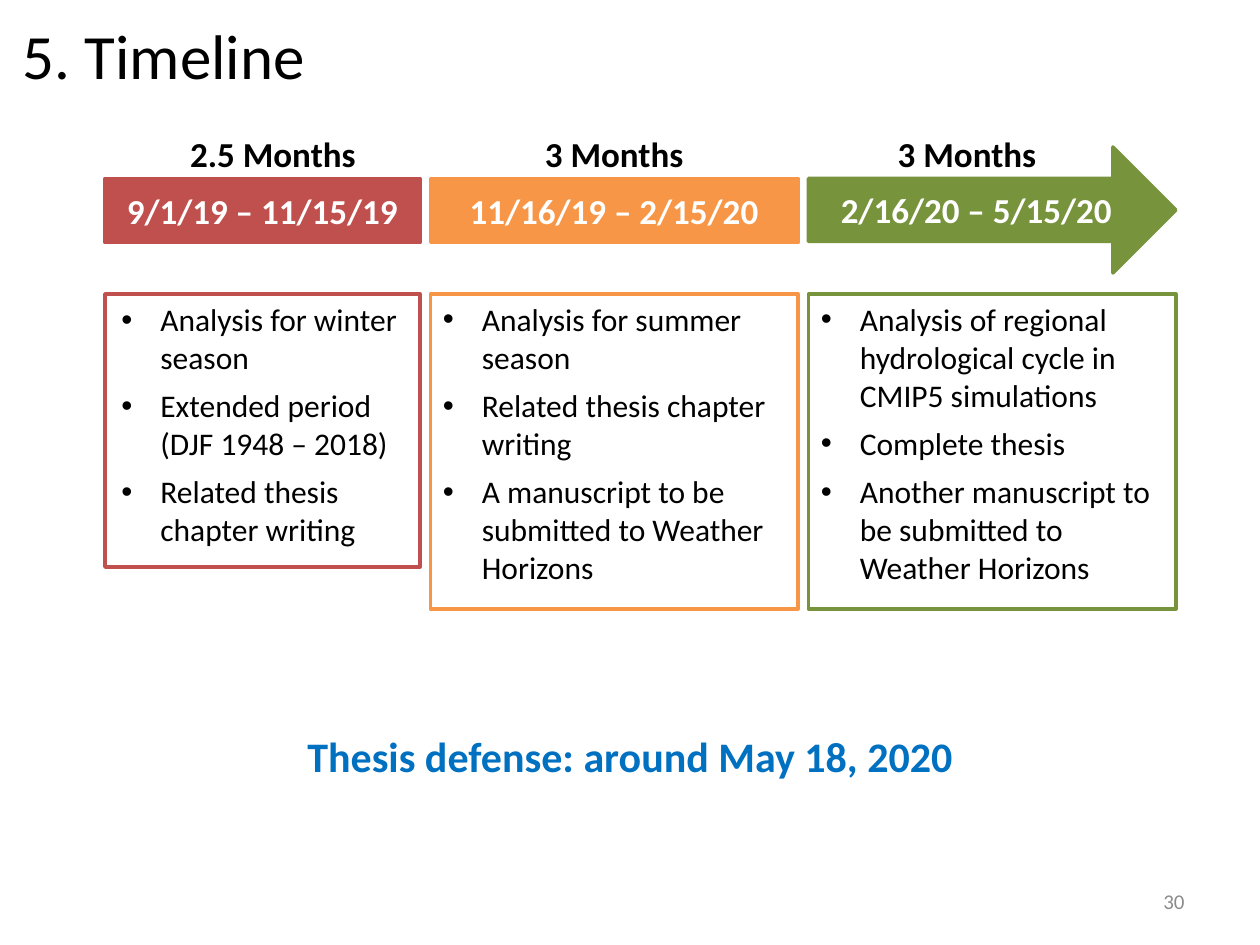
"""Build a thesis timeline slide with three dated phases."""
from dataclasses import dataclass

import pptx
import pptx.dml.color
import pptx.enum.shapes
import pptx.enum.text
import pptx.oxml
import pptx.oxml.ns
import pptx.shapes.autoshape
import pptx.slide
import pptx.text.text
import pptx.util

RGBColor = pptx.dml.color.RGBColor
Shape = pptx.enum.shapes.MSO_SHAPE
Align = pptx.enum.text.PP_ALIGN
Anchor = pptx.enum.text.MSO_ANCHOR

BLACK = RGBColor(0x00, 0x00, 0x00)
WHITE = RGBColor(0xFF, 0xFF, 0xFF)
RED = RGBColor(0xC0, 0x50, 0x4D)
ORANGE = RGBColor(0xF7, 0x96, 0x46)
GREEN = RGBColor(0x77, 0x93, 0x3C)
BLUE = RGBColor(0x00, 0x70, 0xC0)
GRAY = RGBColor(0x8C, 0x8C, 0x8C)

SLIDE_WIDTH = pptx.util.Inches(10)
SLIDE_HEIGHT = pptx.util.Inches(7.5)
COLUMNS, ROWS = 120, 90
FIRST_COLUMN, COLUMN_GAP = 10, 1
LABEL_ROW, BAR_ROW, ARROW_ROW, TASK_ROW = 12, 17, 14, 28
LABEL_ROWS, BAR_ROWS, ARROW_ROWS = 5.3, 6.1, 12
BULLET_INDENT = 0.31


@dataclass(frozen=True)
class Box:
    """Place on the slide grid, in columns and rows."""

    column: float
    row: float
    columns: float
    rows: float

    def lengths(self) -> tuple[int, int, int, int]:
        """Return left, top, width and height in slide units."""
        return (
            int(SLIDE_WIDTH * self.column / COLUMNS),
            int(SLIDE_HEIGHT * self.row / ROWS),
            int(SLIDE_WIDTH * self.columns / COLUMNS),
            int(SLIDE_HEIGHT * self.rows / ROWS),
        )


@dataclass(frozen=True)
class TextStyle:
    """Look of a run and its paragraph."""

    size: float
    color: RGBColor = BLACK
    bold: bool = False
    align: Align = Align.LEFT


@dataclass(frozen=True)
class Phase:
    """One period of the timeline with its tasks."""

    duration: str
    dates: str
    color: RGBColor
    columns: float
    task_rows: float
    tasks: tuple[str, ...]
    label_shift: float = 0
    task_inset: float = 0.1
    is_last: bool = False


TITLE_STYLE = TextStyle(36)
LABEL_STYLE = TextStyle(20, bold=True, align=Align.CENTER)
DATES_STYLE = TextStyle(20, WHITE, True, Align.CENTER)
TASK_STYLE = TextStyle(18)
DEFENSE_STYLE = TextStyle(24, BLUE, True, Align.CENTER)
NUMBER_STYLE = TextStyle(12, GRAY, align=Align.RIGHT)

PHASES = (
    Phase("2.5 Months", "9/1/19 – 11/15/19", RED, 30, 26,
          ("Analysis for winter season", "Extended period (DJF 1948 – 2018)",
           "Related thesis chapter writing"),
          label_shift=1, task_inset=0.13),
    Phase("3 Months", "11/16/19 – 2/15/20", ORANGE, 35, 30,
          ("Analysis for summer season", "Related thesis chapter writing",
           "A manuscript to be submitted to Weather Horizons")),
    Phase("3 Months", "2/16/20 – 5/15/20", GREEN, 35, 30,
          ("Analysis of regional hydrological cycle in CMIP5 simulations",
           "Complete thesis",
           "Another manuscript to be submitted to Weather Horizons"),
          label_shift=-2.4, is_last=True),
)


def add_run(paragraph: pptx.text.text._Paragraph, text: str, style: TextStyle) -> None:
    """Add one styled run and align its paragraph."""
    paragraph.alignment = style.align
    run = paragraph.add_run()
    run.text = text
    run.font.name = "Calibri"
    run.font.size = pptx.util.Pt(style.size)
    run.font.bold = style.bold
    run.font.color.rgb = style.color


def add_text(slide: pptx.slide.Slide, box: Box, text: str, style: TextStyle,
             wrap: bool = True, anchor: Anchor = Anchor.TOP) -> None:
    """Add a text box with a single line."""
    frame = slide.shapes.add_textbox(*box.lengths()).text_frame
    frame.word_wrap = wrap
    frame.vertical_anchor = anchor
    add_run(frame.paragraphs[0], text, style)


def add_outlined(slide: pptx.slide.Slide, kind: Shape, box: Box,
                 color: RGBColor) -> pptx.shapes.autoshape.Shape:
    """Add an unfilled shape with a coloured outline."""
    shape = slide.shapes.add_shape(kind, *box.lengths())
    shape.shadow.inherit = False
    shape.fill.background()
    shape.line.color.rgb = color
    shape.line.width = pptx.util.Pt(2)
    return shape


def add_bullet(paragraph: pptx.text.text._Paragraph) -> None:
    """Give a paragraph a hanging round bullet."""
    indent = pptx.util.Inches(BULLET_INDENT)
    properties = paragraph._p.get_or_add_pPr()
    properties.set("marL", str(indent))
    properties.set("indent", str(-indent))
    namespace = pptx.oxml.ns.nsdecls("a")
    for markup in (f'<a:buFont {namespace} typeface="Arial"/>',
                   f'<a:buChar {namespace} char="•"/>'):
        properties.append(pptx.oxml.parse_xml(markup))


def add_dates(slide: pptx.slide.Slide, phase: Phase, column: float) -> None:
    """Add the filled bar or arrow that carries the dates."""
    if phase.is_last:
        kind, row, rows = Shape.RIGHT_ARROW, ARROW_ROW, ARROW_ROWS
    else:
        kind, row, rows = Shape.RECTANGLE, BAR_ROW, BAR_ROWS
    shape = add_outlined(slide, kind, Box(column, row, phase.columns, rows), phase.color)
    shape.fill.solid()
    shape.fill.fore_color.rgb = phase.color
    shape.text_frame.vertical_anchor = Anchor.MIDDLE
    add_run(shape.text_frame.paragraphs[0], phase.dates, DATES_STYLE)


def add_tasks(slide: pptx.slide.Slide, phase: Phase, column: float) -> None:
    """Add the outlined list of tasks."""
    box = Box(column, TASK_ROW, phase.columns, phase.task_rows)
    frame = add_outlined(slide, Shape.RECTANGLE, box, phase.color).text_frame
    frame.word_wrap = True
    frame.vertical_anchor = Anchor.TOP
    frame.margin_left = pptx.util.Inches(phase.task_inset)
    for index, task in enumerate(phase.tasks):
        paragraph = frame.add_paragraph() if index else frame.paragraphs[0]
        paragraph.space_after = pptx.util.Pt(6)
        add_bullet(paragraph)
        add_run(paragraph, task, TASK_STYLE)


def main() -> None:
    """Build and save the presentation."""
    presentation = pptx.Presentation()
    presentation.slide_width, presentation.slide_height = SLIDE_WIDTH, SLIDE_HEIGHT
    slide = presentation.slides.add_slide(presentation.slide_layouts[6])

    add_text(slide, Box(1, 1, 29.5, 8.5), "5. Timeline", TITLE_STYLE, wrap=False)
    column = FIRST_COLUMN
    for phase in PHASES:
        add_dates(slide, phase, column)
        label = Box(column + phase.label_shift, LABEL_ROW, phase.columns, LABEL_ROWS)
        add_text(slide, label, phase.duration, LABEL_STYLE)
        add_tasks(slide, phase, column)
        column += phase.columns + COLUMN_GAP
    add_text(slide, Box(24, 69, 72, 6), "Thesis defense: around May 18, 2020", DEFENSE_STYLE)
    add_text(slide, Box(86, 83.4, 28, 4.8), "30", NUMBER_STYLE, anchor=Anchor.MIDDLE)
    presentation.save("out.pptx")


if __name__ == "__main__":
    main()
